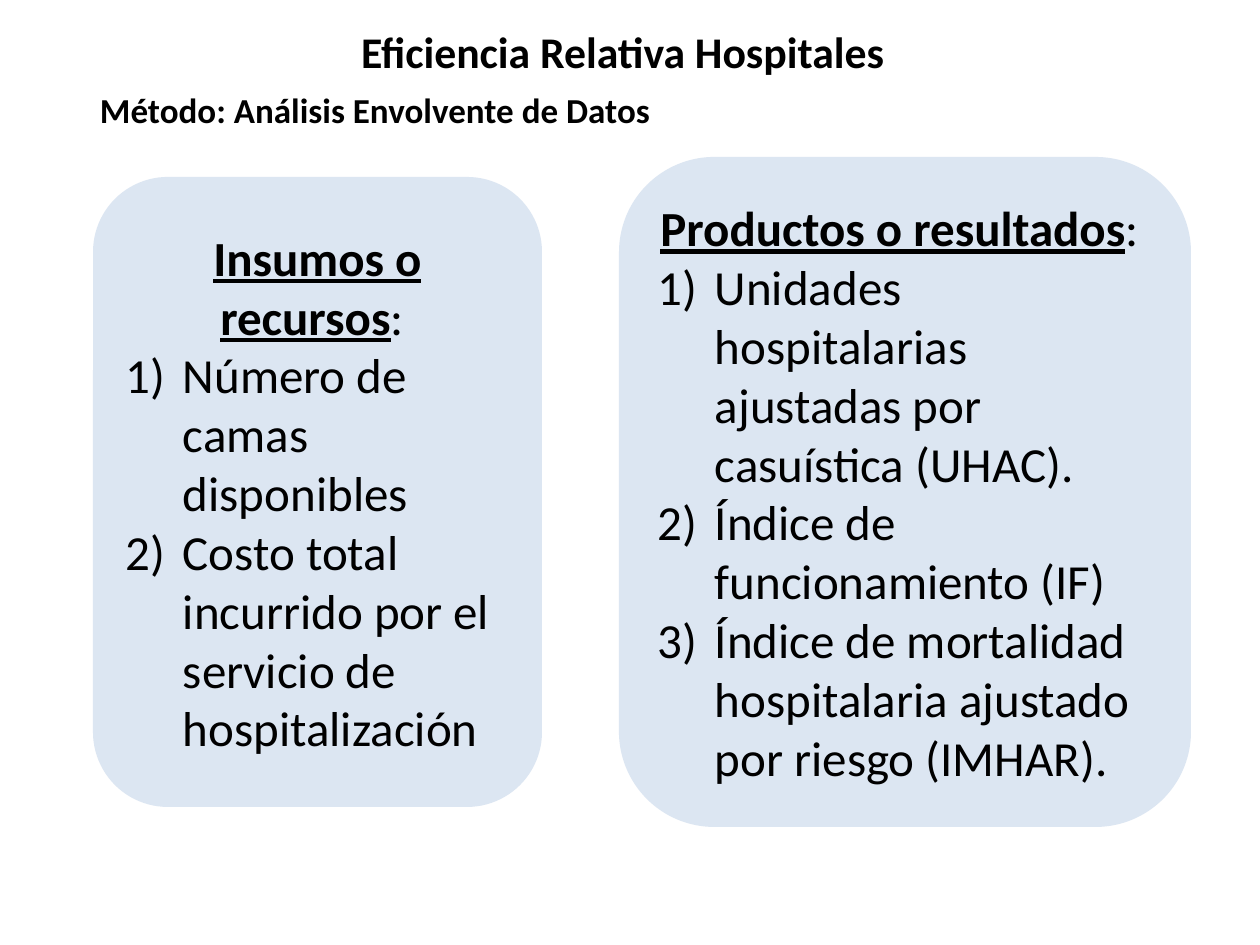
from lxml import etree
from pptx import Presentation, util as u
from pptx.dml.color import RGBColor
from pptx.enum import shapes, text
from pptx.oxml.ns import qn

SCALE = 914400 / 126
INK, PANEL = "000000", "DCE6F2"


def px(n):
    """Turn pixels into EMU."""
    return u.Emu(round(n * SCALE))


def tint(fmt, color):
    """Give a fill or font colour from a hex string."""
    fmt.rgb = RGBColor.from_string(color)


def add_run(para, words, size, **style):
    """Add a styled run to a paragraph."""
    run = para.add_run()
    run.text = words
    for key, value in {"name": "Calibri", "size": u.Pt(size), **style}.items():
        setattr(run.font, key, value)
    tint(run.font.color, INK)


def set_frame(frame, **style):
    """Set the insets and layout of a text frame."""
    base = {"margin_left": px(11), "margin_right": px(11),
            "margin_top": px(5), "margin_bottom": px(5)}
    for key, value in {**base, **style}.items():
        setattr(frame, key, value)


def place(shape, box):
    """Move and size a shape to a pixel box."""
    for key, n in zip(("left", "top", "width", "height"), box):
        setattr(shape, key, px(n))


def heading(shape, box, words, size):
    """Fill a one-line bold heading."""
    place(shape, box)
    set_frame(shape.text_frame, word_wrap=False, vertical_anchor=text.MSO_ANCHOR.TOP,
              auto_size=text.MSO_AUTO_SIZE.SHAPE_TO_FIT_TEXT)
    para = shape.text_frame.paragraphs[0]
    para.alignment = text.PP_ALIGN.LEFT
    add_run(para, words, size, bold=True)


def number(para):
    """Number a paragraph with a hanging indent."""
    props = para._p.get_or_add_pPr()
    props.set("marL", str(px(57)))
    props.set("indent", str(-px(57)))
    etree.SubElement(props, qn("a:buFont"), typeface="+mj-lt")
    etree.SubElement(props, qn("a:buAutoNum"), type="arabicParenR")


def panel(slide, box, head, items):
    """Draw a rounded panel with a heading and a numbered list."""
    shape = slide.shapes.add_shape(
        shapes.MSO_SHAPE.ROUNDED_RECTANGLE, *map(px, box))
    shape.shadow.inherit = False
    shape.fill.solid()
    tint(shape.fill.fore_color, PANEL)
    shape.line.fill.background()
    frame = shape.text_frame
    set_frame(frame, word_wrap=True, vertical_anchor=text.MSO_ANCHOR.MIDDLE)
    para = frame.paragraphs[0]
    para.alignment = text.PP_ALIGN.CENTER
    add_run(para, head, 28, bold=True, underline=True)
    add_run(para, ": ", 28)
    for item in items:
        para = frame.add_paragraph()
        para.alignment = text.PP_ALIGN.LEFT
        number(para)
        add_run(para, item, 28)


def main():
    """Build the slide and save it."""
    deck = Presentation()
    deck.slide_width, deck.slide_height = px(1260), px(945)
    slide = deck.slides.add_slide(deck.slide_layouts[5])
    heading(slide.shapes.title, (350, 20, 553, 64),
            "Eficiencia Relativa Hospitales", 25)
    panel(slide, (93, 177, 449, 630), "Insumos o recursos", (
        "Número de camas disponibles",
        "Costo total incurrido por el servicio de hospitalización"))
    box = (89, 83, 577, 54)
    heading(slide.shapes.add_textbox(*map(px, box)), box,
            "Método: Análisis Envolvente de Datos", 20)
    panel(slide, (619, 157, 572, 670), "Productos o resultados", (
        "Unidades hospitalarias ajustadas por casuística (UHAC).",
        "Índice de funcionamiento (IF)",
        "Índice de mortalidad hospitalaria ajustado por riesgo (IMHAR)."))
    deck.save("out.pptx")


if __name__ == "__main__":
    main()
